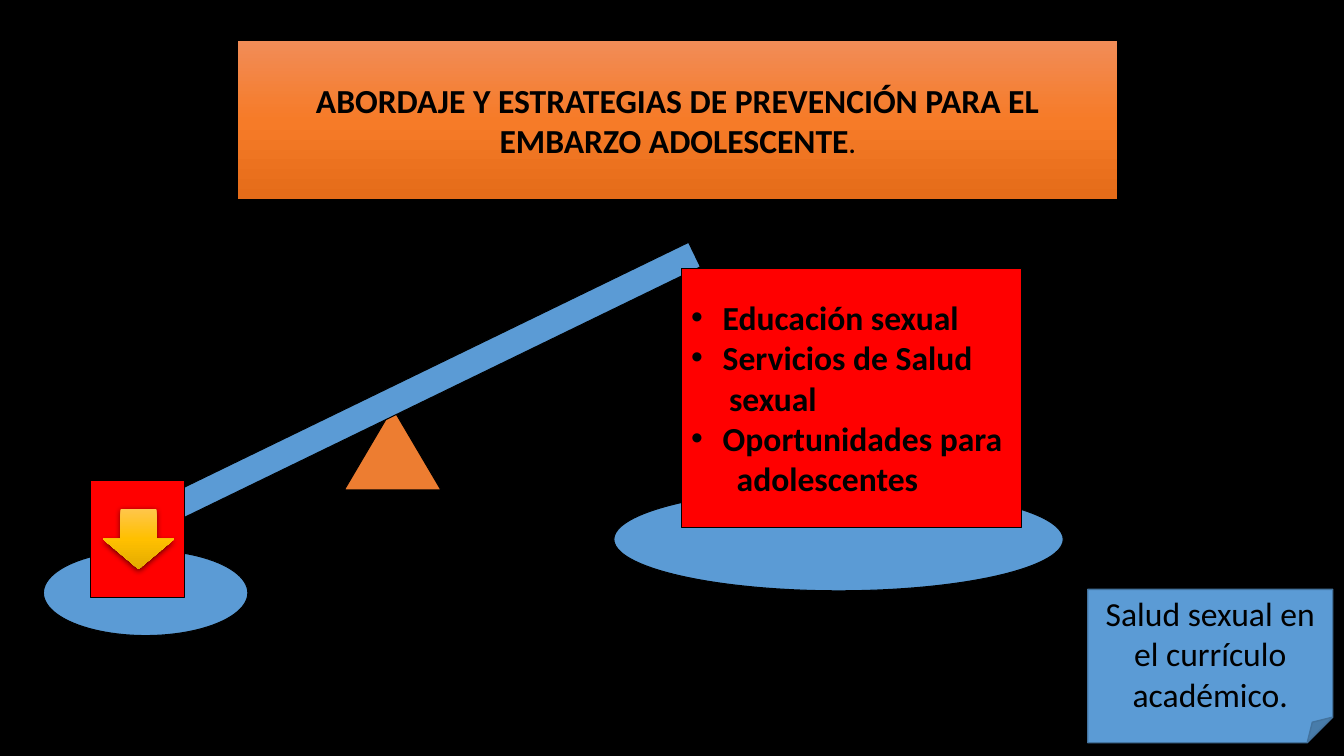
from dataclasses import dataclass

from lxml import etree
from pptx import Presentation
from pptx import util as u
from pptx.dml.color import RGBColor
from pptx.enum import shapes, text
from pptx.oxml import parse_xml
from pptx.oxml.ns import nsdecls, qn


@dataclass(frozen=True)
class Theme:
    font: str = "Calibri"
    size: int = 24
    small: int = 18
    black: str = "000000"
    blue: str = "5B9BD5"
    note_line: str = "43739E"
    orange: str = "ED7D31"
    red: str = "FF0000"
    title_gradient: tuple = ("F18C57", "F67B28", "E56C19")
    arrow_gradient: tuple = ("FFC64B", "FFC000", "E3AB00")


THEME = Theme()
KIND = shapes.MSO_SHAPE


def color(value):
    return RGBColor.from_string(value)


def place(shape, left, top, width, height):
    shape.left, shape.top = u.Pt(left), u.Pt(top)
    shape.width, shape.height = u.Pt(width), u.Pt(height)


def paint(shape, fill, line=THEME.black, weight=0.75):
    shape.fill.solid()
    shape.fill.fore_color.rgb = color(fill)
    shape.line.color.rgb = color(line)
    shape.line.width = u.Pt(weight)


def paint_gradient(shape, colors):
    """Vertical three-stop gradient with a soft shadow below."""
    shape.fill.gradient()
    shape.fill.gradient_angle = 270
    shape.line.fill.background()
    properties = shape._element.spPr
    stops = properties.find(qn("a:gradFill")).find(qn("a:gsLst"))
    for stop in list(stops):
        stops.remove(stop)
    for index, value in enumerate(colors):
        stop = etree.SubElement(stops, qn("a:gs"), pos=str(index * 50000))
        etree.SubElement(stop, qn("a:srgbClr"), val=value)
    for effects in properties.findall(qn("a:effectLst")):
        properties.remove(effects)
    properties.append(parse_xml(
        f'<a:effectLst {nsdecls("a")}><a:outerShdw blurRad="{u.Pt(4.5)}" '
        f'dist="{u.Pt(1.5)}" dir="5400000" algn="ctr" rotWithShape="0">'
        f'<a:srgbClr val="{THEME.black}"><a:alpha val="63000"/></a:srgbClr>'
        '</a:outerShdw></a:effectLst>'))


def add_shape(slide, kind, box, rotation=0):
    shape = slide.shapes.add_shape(kind, *(u.Pt(value) for value in box))
    shape.shadow.inherit = False
    shape.rotation = rotation
    return shape


def prepare_text(shape):
    frame = shape.text_frame
    frame.word_wrap = True
    frame.auto_size = text.MSO_AUTO_SIZE.NONE
    frame.vertical_anchor = text.MSO_ANCHOR.MIDDLE
    return frame


def add_run(paragraph, words, bold=False, size=THEME.size):
    run = paragraph.add_run()
    run.text = words
    run.font.name = THEME.font
    run.font.size = u.Pt(size)
    run.font.bold = bold
    run.font.color.rgb = color(THEME.black)


def set_bullet(paragraph, margin, bulleted):
    properties = paragraph._p.get_or_add_pPr()
    properties.set("marL", str(u.Pt(margin)))
    properties.set("indent", str(u.Pt(-margin if bulleted else 0)))
    if bulleted:
        etree.SubElement(properties, qn("a:buFont"), typeface="Arial")
        etree.SubElement(properties, qn("a:buChar"), char="•")
    else:
        etree.SubElement(properties, qn("a:buNone"))


def fill_title(title):
    place(title, 170, 29.5, 628, 112.5)
    title._element.spPr.append(parse_xml(
        f'<a:prstGeom {nsdecls("a")} prst="roundRect"><a:avLst/></a:prstGeom>'))
    paint_gradient(title, THEME.title_gradient)
    paragraph = prepare_text(title).paragraphs[0]
    paragraph.alignment = text.PP_ALIGN.CENTER
    add_run(paragraph, "ABORDAJE Y ESTRATEGIAS DE PREVENCIÓN PARA EL "
                       "EMBARZO ADOLESCENTE", bold=True)
    add_run(paragraph, ".", bold=True, size=THEME.small)


def fill_list(body, lines):
    place(body, 486.5, 191.5, 243, 185)
    paint(body, THEME.red)
    frame = prepare_text(body)
    for index, (words, margin, bulleted) in enumerate(lines):
        paragraph = frame.add_paragraph() if index else frame.paragraphs[0]
        paragraph.alignment = text.PP_ALIGN.LEFT
        paragraph.space_before = u.Pt(0)
        set_bullet(paragraph, margin, bulleted)
        add_run(paragraph, words, bold=True)


def add_note(slide, words):
    note = add_shape(slide, KIND.FOLDED_CORNER, (777, 421, 175, 109.5))
    paint(note, THEME.blue, THEME.note_line, 1)
    paragraph = prepare_text(note).paragraphs[0]
    paragraph.alignment = text.PP_ALIGN.CENTER
    add_run(paragraph, words)


def main():
    presentation = Presentation()
    presentation.slide_width, presentation.slide_height = u.Pt(960), u.Pt(540)
    slide = presentation.slides.add_slide(presentation.slide_layouts[1])
    slide.background.fill.solid()
    slide.background.fill.fore_color.rgb = color(THEME.black)
    title, body = slide.placeholders

    fill_title(title)

    # Seesaw: support, beam, left pan and weight, right pan
    for kind, box, fill, rotation in (
        (KIND.ISOSCELES_TRIANGLE, (246, 291.5, 69, 58.5), THEME.orange, 0),
        (KIND.RECTANGLE, (92, 265, 425.5, 19.5), THEME.blue, -25.9),
        (KIND.OVAL, (31, 393, 146, 61), THEME.blue, 0),
        (KIND.RECTANGLE, (65, 343.5, 67, 83), THEME.red, 0),
        (KIND.OVAL, (438.5, 348.5, 321, 73.5), THEME.blue, 0),
    ):
        paint(add_shape(slide, kind, box, rotation), fill)

    # List resting on the right pan
    slide.shapes._spTree.append(body._element)
    fill_list(body, (
        ("Educación sexual", 22.5, True),
        ("Servicios de Salud", 22.5, True),
        ("sexual", 27, False),
        ("Oportunidades para", 22.5, True),
        ("adolescentes", 32.5, False),
    ))

    # Arrow on the left weight, and the corner note
    arrow = add_shape(slide, KIND.DOWN_ARROW, (73.5, 363.5, 51, 43))
    paint_gradient(arrow, THEME.arrow_gradient)
    add_note(slide, "Salud sexual en el currículo académico.")

    presentation.save("out.pptx")


if __name__ == "__main__":
    main()
